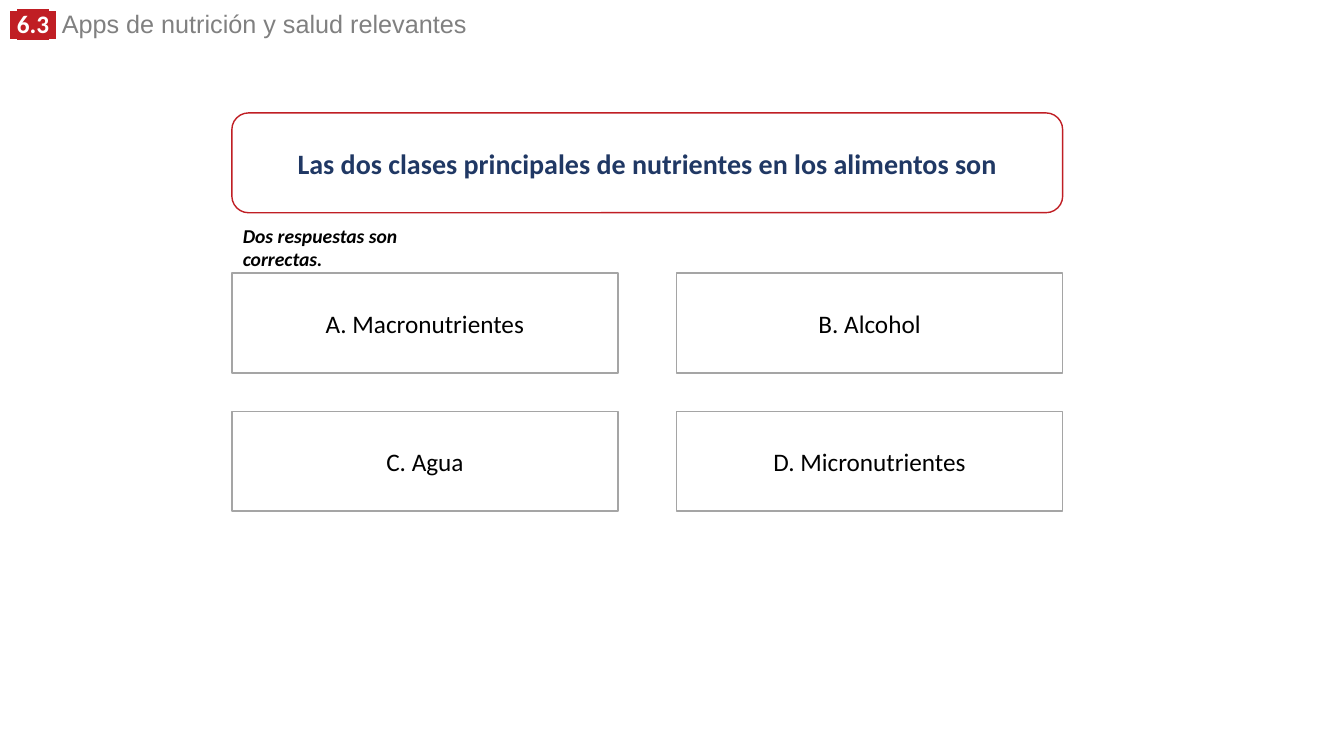
"""Build the quiz slide on the main classes of nutrients."""
from lxml import etree
from pptx import Presentation
from pptx.dml.color import RGBColor
from pptx.enum.shapes import MSO_SHAPE
from pptx.enum.text import MSO_ANCHOR, PP_ALIGN
from pptx.oxml.ns import qn
from pptx.util import Inches, Pt


def color(hex_code):
    return RGBColor.from_string(hex_code)


def add_card(preset, left, top, width, text, size, text_color, line_color, bold=False):
    card = slide.shapes.add_shape(
        preset, Inches(left), Inches(top), Inches(width), Inches(0.99))
    card.shadow.inherit = False
    card.fill.solid()
    card.fill.fore_color.rgb = color("FFFFFF")
    card.line.color.rgb = color(line_color)
    card.line.width = Pt(1)
    card.text_frame.word_wrap = True
    card.text_frame.vertical_anchor = MSO_ANCHOR.MIDDLE
    label = card.text_frame.paragraphs[0]
    label.text = text
    label.alignment = PP_ALIGN.CENTER
    label.font.name = "Calibri"
    label.font.size = Pt(size)
    label.font.bold = bold
    label.font.color.rgb = color(text_color)


presentation = Presentation()
presentation.slide_width = Inches(13.33)
presentation.slide_height = Inches(7.5)
slide = presentation.slides.add_slide(presentation.slide_layouts[6])

header = slide.shapes.add_textbox(Inches(0), Inches(0.09), Inches(9.52), Inches(0.35))
header.text_frame.word_wrap = True
heading = header.text_frame.paragraphs[0]
heading.line_spacing = 0.8
heading.font.size = Pt(18)
for text, font_name in ((" ", "Arial"), ("6.3", "Calibri"), (" ", "Arial")):
    badge = heading.add_run()
    badge.text = text
    badge.font.name = font_name
    badge.font.size = Pt(18)
    badge.font.bold = True
    badge.font.color.rgb = color("FFFFFF")
    highlight = etree.Element(qn("a:highlight"))
    etree.SubElement(highlight, qn("a:srgbClr"), val="C01E24")
    badge.font._element.find(qn("a:solidFill")).addnext(highlight)
section = heading.add_run()
section.text = " Apps de nutrición y salud relevantes"
section.font.name = "Arial"
section.font.size = Pt(18)
section.font.color.rgb = color("808080")

add_card(MSO_SHAPE.ROUNDED_RECTANGLE, 2.3, 1.12, 8.24,
         "Las dos clases principales de nutrientes en los alimentos son",
         20, "203864", "C01E24", bold=True)

answers = ("A. Macronutrientes", "B. Alcohol", "C. Agua", "D. Micronutrientes")
for index, answer in enumerate(answers):
    row, column = divmod(index, 2)
    add_card(MSO_SHAPE.RECTANGLE, 2.3 + 4.41 * column, 2.71 + 1.37 * row, 3.83,
             answer, 18, "000000", "A5A5A5")

hint = slide.shapes.add_textbox(Inches(2.31), Inches(2.17), Inches(2.24), Inches(0.34))
hint.text_frame.word_wrap = True
instruction = hint.text_frame.paragraphs[0]
instruction.text = "Dos respuestas son correctas."
instruction.font.name = "Calibri"
instruction.font.size = Pt(14)
instruction.font.bold = True
instruction.font.italic = True
instruction.font.color.rgb = color("000000")

presentation.save("out.pptx")
